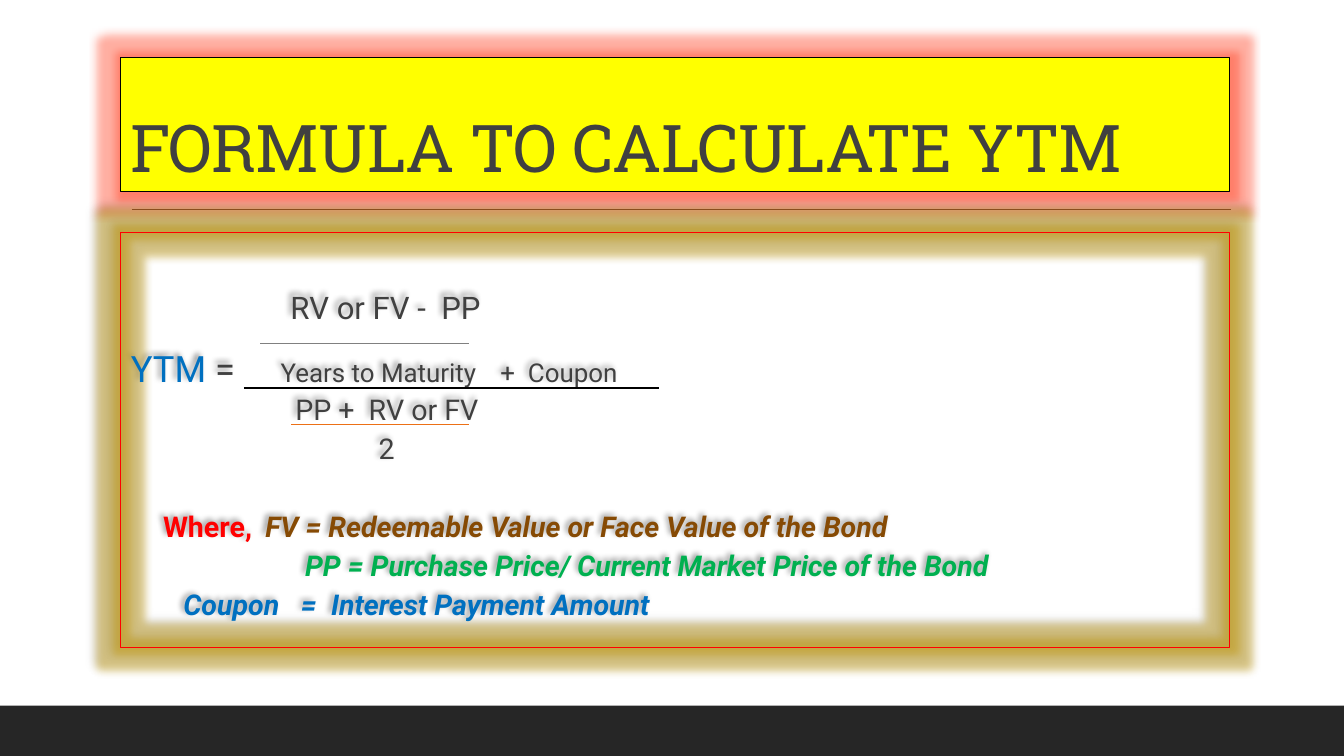
"""Build a slide with the formula for yield to maturity."""
from lxml import etree
from pptx import Presentation
from pptx import util as u
from pptx.dml.color import RGBColor
from pptx.enum import shapes, text
from pptx.oxml import ns

BLACK = RGBColor(0x00, 0x00, 0x00)
CHARCOAL = RGBColor(0x26, 0x26, 0x26)
INK = RGBColor(0x40, 0x40, 0x40)
GREY = RGBColor(0x80, 0x80, 0x80)
YELLOW = RGBColor(0xFF, 0xFF, 0x00)
RED = RGBColor(0xFF, 0x00, 0x00)
ORANGE = RGBColor(0xEC, 0x70, 0x16)
BLUE = RGBColor(0x00, 0x70, 0xC0)
BROWN = RGBColor(0x86, 0x4A, 0x04)
GREEN = RGBColor(0x00, 0xB0, 0x50)
CORAL = RGBColor(0xFF, 0x38, 0x18)
GOLD = RGBColor(0xC8, 0x9B, 0x00)

HEADING_FONT = "Roboto Slab"
BODY_FONT = "Roboto"
TERM_SIZE = 20.4


def child(parent, tag, **attributes):
    """Append a drawing element to the parent."""
    names = {key: str(value) for key, value in attributes.items()}
    return etree.SubElement(parent, ns.qn(tag), names)


class FormulaSlide:
    """Draws styled elements on one blank page."""

    def __init__(self, deck):
        self.page = deck.slides.add_slide(deck.slide_layouts[6])

    def box(self, left, top, width, height, fill=None, line=None):
        """Add a rectangle without a shadow."""
        box = self.page.shapes.add_shape(
            shapes.MSO_SHAPE.RECTANGLE,
            u.Pt(left), u.Pt(top), u.Pt(width), u.Pt(height))
        if fill is None:
            box.fill.background()
        else:
            box.fill.solid()
            box.fill.fore_color.rgb = fill
        if line is None:
            box.line.fill.background()
        else:
            box.line.color.rgb = line
            box.line.width = u.Pt(0.75)
        box.shadow.inherit = False
        return box

    def effect(self, box, tag, color, alpha, **attributes):
        """Add a glow or shadow to a box."""
        effects = box._element.spPr.find(ns.qn("a:effectLst"))
        paint = child(child(effects, tag, **attributes), "a:srgbClr", val=color)
        child(paint, "a:alpha", val=alpha * 1000)

    def rule(self, left, right, y, color, width=1):
        """Add a horizontal line."""
        rule = self.page.shapes.add_connector(
            shapes.MSO_CONNECTOR.STRAIGHT,
            u.Pt(left), u.Pt(y), u.Pt(right), u.Pt(y))
        rule.line.color.rgb = color
        rule.line.width = u.Pt(width)
        child(rule._element.spPr, "a:effectLst")

    def frame(self, box, anchor, top):
        """Prepare the text frame of a box."""
        frame = box.text_frame
        frame.word_wrap = True
        frame.vertical_anchor = anchor
        frame.margin_left = frame.margin_right = u.Pt(7.2)
        frame.margin_top, frame.margin_bottom = u.Pt(top), u.Pt(3.6)
        return frame

    def span(self, para, words, size, color, font=BODY_FONT, bold=False, italic=False):
        """Add a formatted run."""
        span = para.add_run()
        span.text = words
        span.font.name = font
        span.font.size = u.Pt(size)
        span.font.color.rgb = color
        span.font.bold = bold
        span.font.italic = italic
        return span

    def para(self, para, before, spacing, stops, spans):
        """Fill a left-aligned paragraph with tab stops and runs."""
        para.alignment = text.PP_ALIGN.LEFT
        para.space_before = u.Pt(before)
        para.line_spacing = spacing
        if stops:
            tabs = child(para._p.get_or_add_pPr(), "a:tabLst")
            for stop in stops:
                child(tabs, "a:tab", pos=int(u.Pt(stop)), algn="l")
        return [self.span(para, *span) for span in spans]


def main():
    """Lay out the slide and save it."""
    deck = Presentation()
    deck.slide_width, deck.slide_height = u.Pt(960), u.Pt(540)
    slide = FormulaSlide(deck)

    slide.box(0, 504, 960, 36, CHARCOAL)
    slide.rule(94.3, 879, 149.5, INK)

    title = slide.box(86.4, 41, 792, 95.8, YELLOW, BLACK)
    slide.effect(title, "a:glow", CORAL, 40, rad=int(u.Pt(11)))
    frame = slide.frame(title, text.MSO_ANCHOR.BOTTOM, 3.6)
    heading, = slide.para(frame.paragraphs[0], 0, 0.9, [], [
        ("FORMULA TO CALCULATE YTM", 47, INK, HEADING_FONT)])
    heading._r.get_or_add_rPr().set("spc", "-50")

    body = slide.box(86.4, 166.3, 792, 295.9, line=RED)
    slide.effect(body, "a:glow", GOLD, 40, rad=int(u.Pt(11)))
    slide.effect(body, "a:outerShdw", BLACK, 40, blurRad=int(u.Pt(4)),
                 dist=int(u.Pt(3)), dir=225 * 60000, algn="br", rotWithShape=0)
    frame = slide.frame(body, text.MSO_ANCHOR.TOP, 39.5)
    lines = [
        (0, 1.0, [114], [("\tRV or FV -  PP", 22.2, INK)]),
        (15, 1.0, [107, 264], [
            ("YTM", 25.9, BLUE), (" =", 25.9, INK),
            ("\tYears to Maturity\t+  Coupon", 18.5, INK)]),
        (4, 0.9, [117.5], [("\tPP +  RV or FV", TERM_SIZE, INK)]),
        (6, 0.9, [177], [("\t2", TERM_SIZE, INK)]),
        (33.5, 0.9, [23, 96], [
            ("\tWhere,", TERM_SIZE, RED, BODY_FONT, True),
            ("\tFV = Redeemable Value or Face Value of the Bond",
             TERM_SIZE, BROWN, BODY_FONT, True, True)]),
        (6, 0.9, [124.5], [
            ("\tPP = Purchase Price/ Current Market Price of the Bond",
             TERM_SIZE, GREEN, BODY_FONT, True, True)]),
        (6, 0.9, [37.5, 121.5, 143], [
            ("\tCoupon\t=\tInterest Payment Amount",
             TERM_SIZE, BLUE, BODY_FONT, True, True)]),
    ]
    for index, line in enumerate(lines):
        para = frame.add_paragraph() if index else frame.paragraphs[0]
        slide.para(para, *line)

    slide.rule(185.8, 334.8, 245.5, GREY, 0.5)
    slide.rule(174.2, 470.9, 277.2, BLACK)
    slide.rule(208.1, 334.8, 303.1, ORANGE)

    deck.save("out.pptx")


if __name__ == "__main__":
    main()
